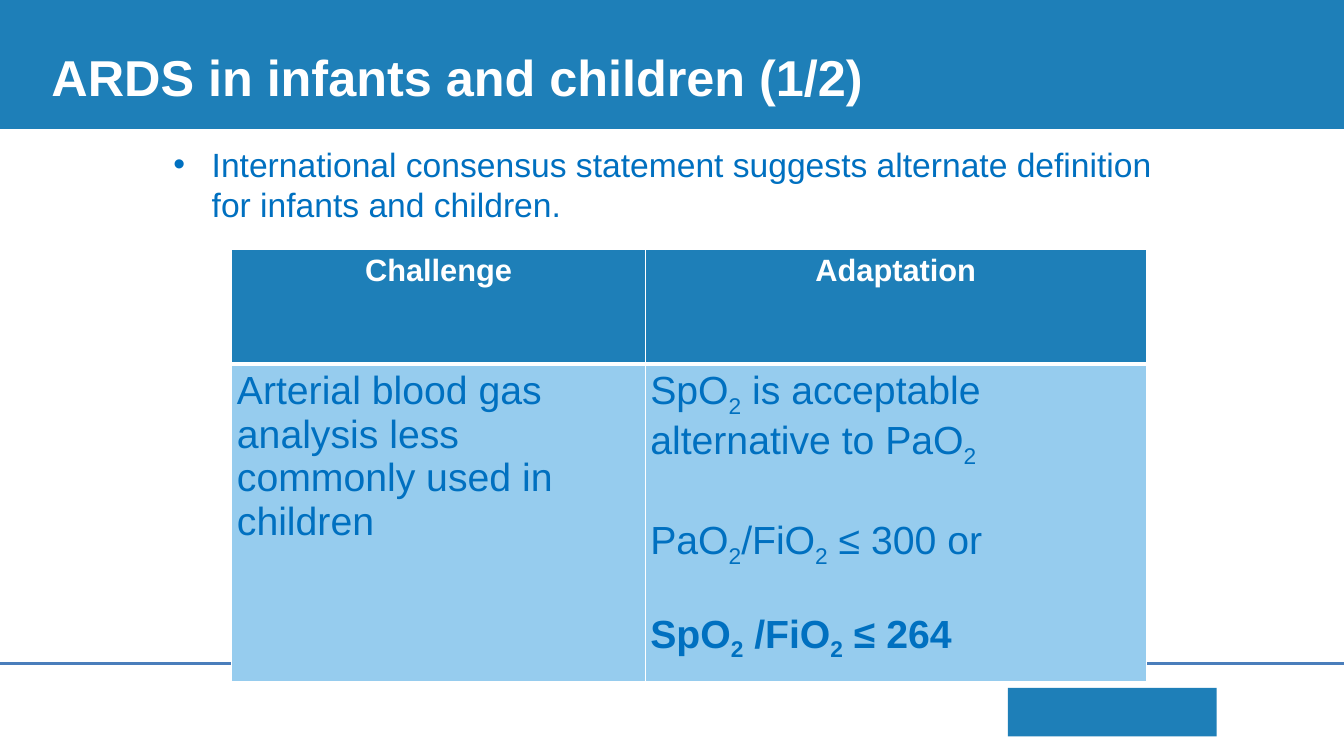
from dataclasses import dataclass
from lxml.etree import SubElement
from pptx import Presentation
from pptx.dml.color import RGBColor
from pptx.enum.shapes import MSO_CONNECTOR as Connector, MSO_SHAPE as Shape
from pptx.enum.text import MSO_ANCHOR as Anchor, PP_ALIGN as Align
from pptx.oxml.ns import qn
from pptx.util import Inches, Pt

TITLE = "ARDS in infants and children (1/2)"
STATEMENT = "International consensus statement suggests alternate definition for infants and children."
HEADINGS = ["Challenge", "Adaptation"]
CHALLENGE = ["Arterial blood gas analysis less commonly used in children"]
ADAPTATION = [
    "SpO_2_ is acceptable alternative to PaO_2_",
    "PaO_2_/FiO_2_ ≤ 300 or",
    "SpO_2_ /FiO_2_ ≤ 264",
]


@dataclass(frozen=True)
class Theme:
    font: str = "Arial"
    blue: str = "1E7FB8"
    text: str = "0070C0"
    pale: str = "96CCEE"
    rule: str = "4A7EBB"
    white: str = "FFFFFF"
    title: int = 36
    body: int = 24
    heading: int = 22
    cell: int = 28


theme = Theme()
WIDTH, HEIGHT = 13.33, 7.5
BAND_HEIGHT = 1.31
RULE_Y = 6.58
PADDING = 0.05
COLUMNS = [4.1, 4.97]
ROWS = [1.14, 2.77]
TABLE_LEFT, TABLE_TOP = 2.3, 2.47
THIN, THICK = 1, 3


def color(value):
    return RGBColor.from_string(value)


def inches(*lengths):
    return [Inches(length) for length in lengths]


def write(frame, lines, size, ink, bold=(False,), align=Align.LEFT, gaps=(0,),
          padding=PADDING, bullet=None, indent=0):
    frame.word_wrap = True
    frame.margin_left = frame.margin_top = Inches(padding)
    frame.margin_right = frame.margin_bottom = Inches(padding)
    for i, line in enumerate(lines):
        paragraph = frame.add_paragraph() if i else frame.paragraphs[0]
        paragraph.alignment = align
        if gaps[i]:
            paragraph.space_before = Pt(gaps[i])
        if bullet:
            props = paragraph._p.get_or_add_pPr()
            props.set("marL", str(Inches(indent)))
            props.set("indent", str(-Inches(indent)))
            SubElement(props, qn("a:buFont"), typeface=theme.font)
            SubElement(props, qn("a:buChar"), char=bullet)
        for part, words in enumerate(line.split("_")):
            if not words:
                continue
            run = paragraph.add_run()
            run.text = words
            run.font.name = theme.font
            run.font.size = Pt(size)
            run.font.bold = bold[i]
            run.font.color.rgb = color(ink)
            if part % 2:
                run.font._element.set("baseline", "-25000")


def add_block(slide, left, top, width, height):
    block = slide.shapes.add_shape(Shape.RECTANGLE, *inches(left, top, width, height))
    block.shadow.inherit = False
    block.fill.solid()
    block.fill.fore_color.rgb = color(theme.blue)
    block.line.fill.background()


def add_rule(slide):
    rule = slide.shapes.add_connector(Connector.STRAIGHT, *inches(0, RULE_Y, WIDTH, RULE_Y))
    rule.line.color.rgb = color(theme.rule)
    rule.line.width = Pt(2)
    SubElement(rule._element.spPr, qn("a:effectLst"))


def paint(cell, fill, top, bottom):
    props = cell._tc.get_or_add_tcPr()
    for side, width in zip("LRTB", (THIN, THIN, top, bottom)):
        border = SubElement(props, qn(f"a:ln{side}"), w=str(Pt(width)))
        solid = SubElement(border, qn("a:solidFill"))
        SubElement(solid, qn("a:srgbClr"), val=theme.white)
    cell.fill.solid()
    cell.fill.fore_color.rgb = color(fill)
    cell.vertical_anchor = Anchor.TOP
    cell.margin_left = cell.margin_right = Inches(PADDING)
    cell.margin_top = cell.margin_bottom = Inches(PADDING)


def add_definition(slide):
    definition = slide.shapes.add_table(
        len(ROWS), len(COLUMNS), *inches(TABLE_LEFT, TABLE_TOP, sum(COLUMNS), sum(ROWS))
    ).table
    for column, width in zip(definition.columns, COLUMNS):
        column.width = Inches(width)
    for row, height in zip(definition.rows, ROWS):
        row.height = Inches(height)
    for i, heading in enumerate(HEADINGS):
        cell = definition.cell(0, i)
        paint(cell, theme.blue, THIN, THICK)
        write(cell.text_frame, [heading], theme.heading, theme.white,
              bold=(True,), align=Align.CENTER)
    for i, lines in enumerate([CHALLENGE, ADAPTATION]):
        cell = definition.cell(1, i)
        paint(cell, theme.pale, THICK, THIN)
        write(cell.text_frame, lines, theme.cell, theme.text,
              bold=(False, False, True), gaps=(0, 36, 31))


def main():
    deck = Presentation()
    deck.slide_width, deck.slide_height = inches(WIDTH, HEIGHT)
    slide = deck.slides.add_slide(deck.slide_layouts[6])
    add_block(slide, 0, -0.03, WIDTH, BAND_HEIGHT)
    add_block(slide, WIDTH * 0.75, HEIGHT * 0.91, 2.07, 0.48)
    add_rule(slide)
    title = slide.shapes.add_textbox(*inches(0.51, 0.13, 12, 1.25)).text_frame
    title.vertical_anchor = Anchor.MIDDLE
    write(title, [TITLE], theme.title, theme.white, bold=(True,), padding=0)
    statement = slide.shapes.add_textbox(*inches(1.67, 1.38, 9.96, 1)).text_frame
    write(statement, [STATEMENT], theme.body, theme.text, bullet="•", indent=0.38)
    add_definition(slide)
    deck.save("out.pptx")


if __name__ == "__main__":
    main()
